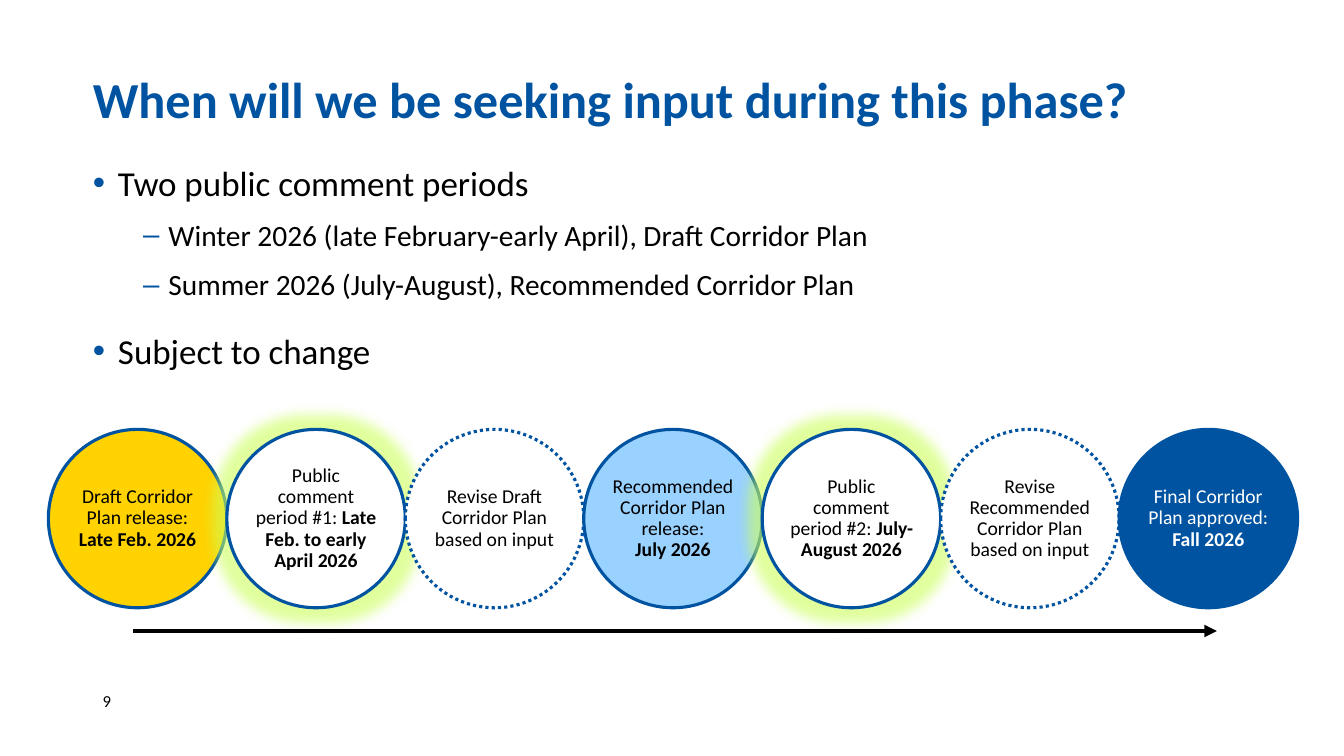
from lxml import etree
from pptx import Presentation, util as u
from pptx.dml.color import RGBColor
from pptx.enum import dml, shapes, text
from pptx.oxml import ns

BLUE = RGBColor(0x00, 0x53, 0xA0)
SKY = RGBColor(0x99, 0xD1, 0xFF)
GOLD = RGBColor(0xFF, 0xD2, 0x00)
WHITE = RGBColor(0xFF, 0xFF, 0xFF)
BLACK = RGBColor(0x00, 0x00, 0x00)
LIME = "CDFF5C"
FONT = "Calibri"

# Content
TITLE = "When will we be seeking input during this phase?"
POINTS = [  # level, text
    (0, "Two public comment periods"),
    (1, "Winter 2026 (late February-early April), Draft Corridor Plan"),
    (1, "Summer 2026 (July-August), Recommended Corridor Plan"),
    (0, "Subject to change"),
]
LEVELS = [  # bullet, size, indent, space before
    ("•", 25, 0.25, 10),
    ("–", 21, 0.75, 0),
]
STEPS = [  # lead, bold date, fill, style
    ("Draft Corridor Plan release: ", "Late Feb. 2026", GOLD, "plain"),
    ("Public comment period #1: ", "Late Feb. to early April 2026", WHITE, "glow"),
    ("Revise Draft Corridor Plan based on input", "", WHITE, "dots"),
    ("Recommended Corridor Plan release:\v", "July 2026", SKY, "plain"),
    ("Public comment period #2: ", "July-August 2026", WHITE, "glow"),
    ("Revise Recommended Corridor Plan based on input", "", WHITE, "dots"),
    ("Final Corridor Plan approved:\v", "Fall 2026", BLUE, "plain"),
]
PAGE = "9"

# Layout, in inches
WIDE, HIGH = 13.33, 7.5
LEFT = 0.92
SPAN = WIDE - 2 * LEFT
ROW_X, ROW_Y, SIZE = 0.48, 4.26, 1.77
LINE_Y, LINE_A, LINE_B = 6.26, 1.32, 12.07

deck = Presentation()
deck.slide_width, deck.slide_height = u.Inches(WIDE), u.Inches(HIGH)
slide = deck.slides.add_slide(deck.slide_layouts[6])


def add(parent, tag, **attrs):
    item = etree.SubElement(parent, ns.qn(tag))
    for key, val in attrs.items():
        item.set(key, str(val))
    return item


def frame(shape, anchor, pads=(0, 0, 0, 0)):
    tf = shape.text_frame
    tf.word_wrap = True
    tf.vertical_anchor = anchor
    (tf.margin_left, tf.margin_top,
     tf.margin_right, tf.margin_bottom) = map(u.Inches, pads)
    return tf


def box(x, y, w, h, anchor, pads=(0, 0, 0, 0)):
    return frame(slide.shapes.add_textbox(*map(u.Inches, (x, y, w, h))), anchor, pads)


def style(para, size, color, bold=False):
    for run in para.runs:
        font = run.font
        font.name, font.size, font.bold = FONT, u.Pt(size), bold
        font.color.rgb = color


# Title
tf = box(LEFT, 0, SPAN, 1.33, text.MSO_ANCHOR.BOTTOM, (0, 0.4, 0, 0.05))
tf.text = TITLE
tf.paragraphs[0].line_spacing = 0.9
style(tf.paragraphs[0], 36, BLUE, True)

# Bullet list
tf = box(LEFT, 1.6, SPAN, 2.5, text.MSO_ANCHOR.TOP)
for i, (level, words) in enumerate(POINTS):
    mark, size, indent, before = LEVELS[level]
    para = tf.add_paragraph() if i else tf.paragraphs[0]
    para.text, para.level = words, level
    para.space_before = u.Pt(before if i else 0)
    para.space_after = u.Pt(10)
    props = para._p.get_or_add_pPr()
    props.set("marL", str(u.Inches(indent)))
    props.set("indent", str(u.Inches(-0.25)))
    add(add(props, "a:buClr"), "a:srgbClr", val=BLUE)
    add(props, "a:buFont", typeface="Arial")
    add(props, "a:buChar", char=mark)
    style(para, size, BLACK)

# Page number
tf = box(LEFT, 6.75, 1.6, 0.4, text.MSO_ANCHOR.MIDDLE, (0.1, 0.05, 0, 0.05))
tf.text = PAGE
style(tf.paragraphs[0], 12, BLACK)

# Row of touching circles
for i, (lead, date, fill, kind) in enumerate(STEPS):
    disc = slide.shapes.add_shape(
        shapes.MSO_SHAPE.OVAL,
        *map(u.Inches, (ROW_X + i * SIZE, ROW_Y, SIZE, SIZE)))
    disc.shadow.inherit = False
    disc.fill.solid()
    disc.fill.fore_color.rgb = fill
    disc.line.color.rgb = BLUE
    disc.line.width = u.Pt(2.25)
    if kind == "dots":
        disc.line.dash_style = dml.MSO_LINE.ROUND_DOT
    if kind == "glow":
        effects = disc._element.spPr.find(ns.qn("a:effectLst"))
        glow = add(effects, "a:glow", rad=u.Pt(18))
        add(add(glow, "a:srgbClr", val=LIME), "a:alpha", val=60000)
    para = frame(disc, text.MSO_ANCHOR.MIDDLE).paragraphs[0]
    para.text = lead
    para.alignment = text.PP_ALIGN.CENTER
    para.line_spacing = 0.9
    if date:
        para.add_run().text = date
    style(para, 14, WHITE if fill == BLUE else BLACK)
    if date:
        para.runs[-1].font.bold = True

# Time arrow
arrow = slide.shapes.add_connector(
    shapes.MSO_CONNECTOR.STRAIGHT,
    *map(u.Inches, (LINE_A, LINE_Y, LINE_B, LINE_Y)))
arrow.line.color.rgb = BLACK
arrow.line.width = u.Pt(3)
add(arrow.line._get_or_add_ln(), "a:tailEnd", type="triangle")
add(arrow._element.spPr, "a:effectLst")

deck.save("out.pptx")
